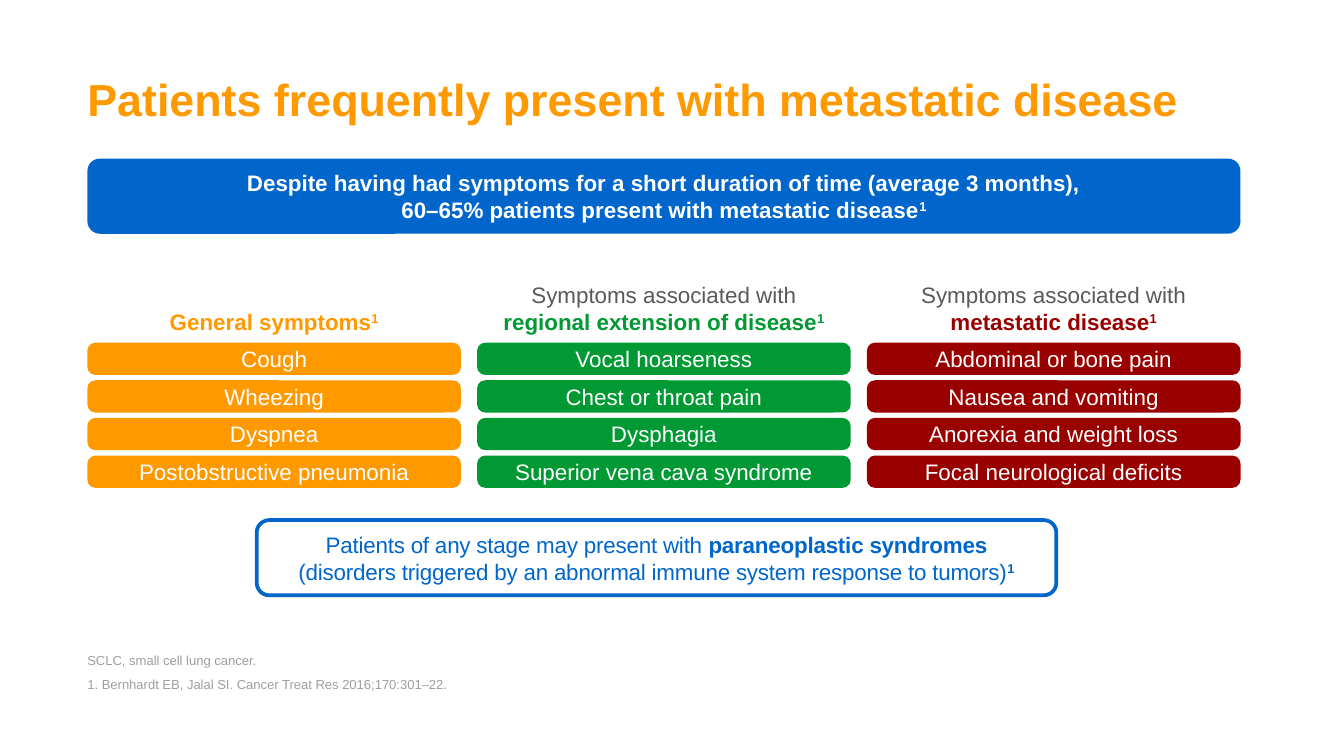
from copy import deepcopy

from lxml import etree
from pptx import Presentation
from pptx import util as u
from pptx.dml.color import RGBColor
from pptx.enum import shapes, text

WHITE, BLUE, ORANGE = "FFFFFF", "0066CC", "FF9900"
GREEN, RED, DARK, GREY = "009933", "990000", "58595B", "9E9FA2"
LEFT, WIDTH, GAP = 0.65, 8.58, 0.12


def colour(value):
    return RGBColor.from_string(value)


def place(shape, left, top, width, height):
    shape.left, shape.top = u.Inches(left), u.Inches(top)
    shape.width, shape.height = u.Inches(width), u.Inches(height)


def style_frame(frame, anchor=text.MSO_ANCHOR.MIDDLE, inset=0.05):
    frame.word_wrap = True
    frame.auto_size = text.MSO_AUTO_SIZE.NONE
    frame.vertical_anchor = anchor
    frame.margin_left = frame.margin_right = u.Inches(inset)
    frame.margin_top = frame.margin_bottom = u.Inches(inset)


def add_span(para, wording, ink, size=12, bold=False, raised=False, spacing=0):
    span = para.add_run()
    span.text = wording
    span.font.name = "Arial"
    span.font.size = u.Pt(size)
    span.font.bold = bold
    span.font.color.rgb = colour(ink)
    props = span.font._element
    if raised:
        props.set("baseline", "30000")
    if spacing:
        props.set("spc", str(round(spacing * 100)))
    return span


def add_break(para, span):
    para.add_line_break()
    para._p[-1].append(deepcopy(span.font._element))


def add_reference(para, ink, spacing=0):
    add_span(para, "1", ink, bold=True, raised=True, spacing=spacing)


def add_box(page, box, fill=None, line=None, corner=None):
    shape = page.shapes.add_shape(
        shapes.MSO_SHAPE.ROUNDED_RECTANGLE, *map(u.Inches, box))
    shape.shadow.inherit = False
    if corner:
        shape.adjustments[0] = corner
    if fill:
        shape.fill.solid()
        shape.fill.fore_color.rgb = colour(fill)
    else:
        shape.fill.background()
    if line:
        shape.line.color.rgb = colour(line)
        shape.line.width = u.Pt(2)
    else:
        shape.line.fill.background()
    style_frame(shape.text_frame)
    para = shape.text_frame.paragraphs[0]
    para.alignment = text.PP_ALIGN.CENTER
    return para


def add_title(page, box):
    title = page.shapes.title
    place(title, *box)
    style_frame(title.text_frame, text.MSO_ANCHOR.BOTTOM, 0)
    para = title.text_frame.paragraphs[0]
    para.alignment = text.PP_ALIGN.LEFT
    para.line_spacing = 0.9
    add_span(para, "Patients frequently present with metastatic disease",
             ORANGE, 24, bold=True)


def add_banner(page, box):
    para = add_box(page, box, fill=BLUE)
    span = add_span(para, "Despite having had symptoms for a short duration "
                    "of time (average 3 months),", WHITE, bold=True)
    add_break(para, span)
    add_span(para, "60–65% patients present with metastatic disease",
             WHITE, bold=True)
    add_reference(para, WHITE)


def add_symptoms(page, box, ink, lead, heading, symptoms):
    left, top, width, height = box
    head_height, bar_height, pitch = 0.5 if lead else 0.3, 0.24, 0.28
    bars_top = top + height - bar_height - pitch * (len(symptoms) - 1)
    label = page.shapes.add_textbox(
        u.Inches(left), u.Inches(bars_top - head_height - 0.01),
        u.Inches(width), u.Inches(head_height))
    style_frame(label.text_frame)
    label.text_frame.margin_left = label.text_frame.margin_right = u.Inches(0.1)
    para = label.text_frame.paragraphs[0]
    para.alignment = text.PP_ALIGN.CENTER
    if lead:
        add_span(para, lead, DARK)
    add_span(para, heading, ink, bold=True)
    add_reference(para, ink)
    for row, symptom in enumerate(symptoms):
        bar = (left, bars_top + row * pitch, width, bar_height)
        add_span(add_box(page, bar, fill=ink, corner=0.25), symptom, WHITE)


def add_callout(page, box):
    tight = -0.1
    para = add_box(page, box, line=BLUE)
    add_span(para, "Patients of any stage may present with ", BLUE,
             spacing=tight)
    span = add_span(para, "paraneoplastic syndromes", BLUE, bold=True,
                    spacing=tight)
    add_break(para, span)
    add_span(para, "(disorders triggered by an abnormal immune system "
             "response to tumors)", BLUE, spacing=tight)
    add_reference(para, BLUE, tight)


def add_notes(page, box):
    left, top, width, height = box
    body = page.placeholders[1]
    place(body, left, top, width, 0.33)
    style_frame(body.text_frame, text.MSO_ANCHOR.BOTTOM, 0)
    para = body.text_frame.paragraphs[0]
    para.line_spacing = 0.9
    para.space_before = para.space_after = u.Pt(6)
    props = para._p.get_or_add_pPr()
    props.set("marL", "0")
    props.set("indent", "0")
    etree.SubElement(
        props, "{http://schemas.openxmlformats.org/drawingml/2006/main}buNone")
    add_span(para, "SCLC, small cell lung cancer.", GREY, 7)
    source = page.shapes.add_textbox(
        u.Inches(left), u.Inches(top + height - 0.4),
        u.Inches(width), u.Inches(0.4))
    style_frame(source.text_frame, text.MSO_ANCHOR.TOP, 0)
    add_span(source.text_frame.paragraphs[0],
             "1. Bernhardt EB, Jalal SI. Cancer Treat Res 2016;170:301–22.",
             GREY, 7)


def main():
    deck = Presentation()
    deck.slide_width, deck.slide_height = u.Inches(10), u.Inches(10 * 9 / 16)
    page = deck.slides.add_slide(deck.slide_layouts[1])
    add_title(page, (LEFT, 0.3, WIDTH, 0.64))
    add_banner(page, (LEFT, 1.18, WIDTH, 0.56))
    columns = [
        (ORANGE, "", "General symptoms",
         ["Cough", "Wheezing", "Dyspnea", "Postobstructive pneumonia"]),
        (GREEN, "Symptoms associated with ", "regional extension of disease",
         ["Vocal hoarseness", "Chest or throat pain", "Dysphagia",
          "Superior vena cava syndrome"]),
        (RED, "Symptoms associated with ", "metastatic disease",
         ["Abdominal or bone pain", "Nausea and vomiting",
          "Anorexia and weight loss", "Focal neurological deficits"]),
    ]
    width = (WIDTH - GAP * (len(columns) - 1)) / len(columns)
    for index, column in enumerate(columns):
        left = LEFT + index * (width + GAP)
        add_symptoms(page, (left, 2.04, width, 1.59), *column)
    add_callout(page, (1.91, 3.87, 5.95, 0.56))
    add_notes(page, (LEFT, 4.64, 8.72, 0.79))
    deck.save("out.pptx")


if __name__ == "__main__":
    main()
